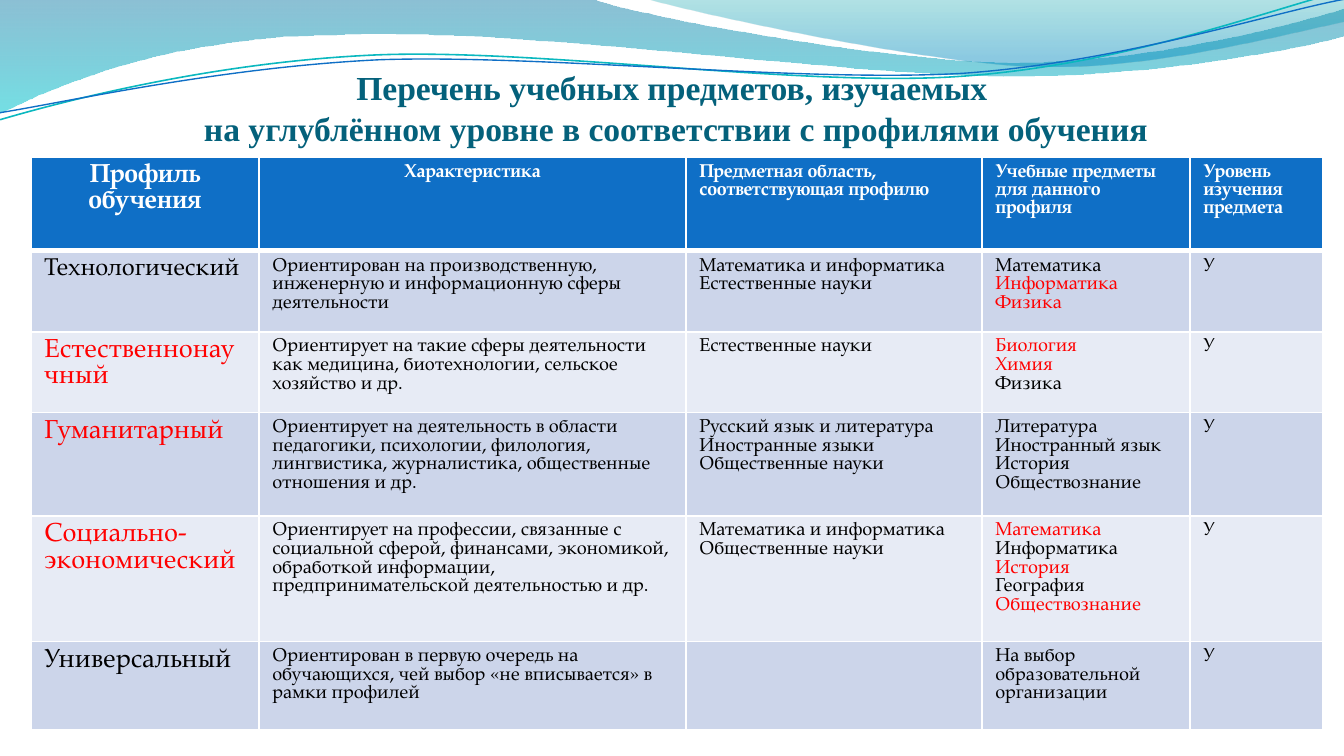
"""Build the slide that lists advanced school subjects by study profile."""
from lxml.etree import SubElement
from pptx import Presentation
from pptx.dml.color import RGBColor
from pptx.enum.text import MSO_ANCHOR, PP_ALIGN
from pptx.oxml.ns import qn
from pptx.util import Pt

SCALE = 914400 / 134.4

WHITE = RGBColor(0xFF, 0xFF, 0xFF)
BLACK = RGBColor(0x00, 0x00, 0x00)
RED = RGBColor(0xFF, 0x00, 0x00)
BLUE = RGBColor(0x0F, 0x6F, 0xC6)
TEAL = RGBColor(0x0A, 0xB8, 0xBF)
TITLE_TEAL = RGBColor(0x04, 0x61, 0x7B)
DARK_BAND = RGBColor(0xCC, 0xD5, 0xEA)
LIGHT_BAND = RGBColor(0xE7, 0xEB, 0xF5)
WAVE_TOP = RGBColor(0x00, 0x74, 0xA1)
WAVE_BOTTOM = RGBColor(0x00, 0xC6, 0xCF)
CREST_TOP = RGBColor(0x00, 0xA1, 0xA9)
CREST_BOTTOM = RGBColor(0x00, 0x8B, 0xBF)

TITLE = ("Перечень учебных предметов, изучаемых\v"
         " на углублённом уровне в соответствии с профилями обучения")
TITLE_FORMAT = {"name": "Times New Roman", "size": Pt(18), "bold": True}

WAVES = [
    ([[(0, 0)], [(591, -1)],
      [(640, 17), (892, 63), (1019, 63)], [(1147, 63), (1288, 26), (1344, 9)],
      [(1345, 36)],
      [(1321, 44), (1169, 77), (1003, 77)], [(836, 75), (513, 28), (345, 35)],
      [(173, 36), (62, 83), (-1, 114)]],
     [(0, WAVE_TOP, 45), (1, WAVE_BOTTOM, 55)]),
    ([[(644, -1)],
      [(684, 11), (917, 62), (1034, 66)], [(1151, 70), (1292, 32), (1344, 22)],
      [(1344, 0)]],
     [(0, CREST_TOP, 30), (0.8, CREST_BOTTOM, 45)]),
]
STRAND_ROTATION = 357.3
STRANDS = [
    ([[(-2, 88)],
      [(64, 72), (212, 41), (372, 41)], [(533, 41), (795, 93), (956, 90)],
      [(1119, 87), (1264, 40), (1344, 23)]], TEAL, 0.85),
    ([[(-2, 81)],
      [(62, 74), (220, 46), (380, 46)], [(542, 48), (801, 89), (963, 87)],
      [(1123, 83), (1273, 41), (1346, 31)]], BLUE, 0.75),
]

COLUMN_WIDTHS = [228, 427, 296, 208, 133]
ROW_HEIGHTS = [94, 74, 69, 96, 120, 88]
RED_MARK = "!"
HEADER = ["Профиль обучения", "Характеристика",
          "Предметная область, соответствующая профилю",
          "Учебные предметы для данного профиля", "Уровень изучения предмета"]
PROFILES = [
    ["Технологический",
     "Ориентирован на производственную, инженерную и информационную сферы деятельности",
     "Математика и информатика\nЕстественные науки",
     "Математика\n!Информатика\n!Физика", "У"],
    ["!Естественнонаучный",
     "Ориентирует на такие сферы деятельности как медицина, биотехнологии, "
     "сельское хозяйство и др.",
     "Естественные науки", "!Биология\n!Химия\nФизика", "У"],
    ["!Гуманитарный",
     "Ориентирует на деятельность в области педагогики, психологии, филология, "
     "лингвистика, журналистика, общественные отношения и др.",
     "Русский язык и литература\nИностранные языки\nОбщественные науки",
     "Литература\nИностранный язык\nИстория\nОбществознание", "У"],
    ["!Социально-экономический",
     "Ориентирует на профессии, связанные с социальной сферой, финансами, экономикой, "
     "обработкой информации, предпринимательской деятельностью и др.",
     "Математика и информатика\nОбщественные науки",
     "!Математика\nИнформатика\n!История\nГеография\n!Обществознание", "У"],
    ["Универсальный",
     "Ориентирован в первую очередь на обучающихся, чей выбор «не вписывается» "
     "в рамки профилей",
     "", "На выбор образовательной организации", "У"],
]


def px(length):
    """Turn px into EMU."""
    return round(length * SCALE)


def format_font(font, values, color):
    """Apply format values and a colour to a font."""
    for attribute, value in values.items():
        setattr(font, attribute, value)
    font.color.rgb = color


def add_outline(slide, segments, close):
    """Add a freeform whose three-point segments are cubic curves."""
    (start,), *rest = segments
    builder = slide.shapes.build_freeform(*start, scale=SCALE)
    builder.add_line_segments([point for segment in rest for point in segment], close=close)
    outline = builder.convert_to_shape()
    outline.shadow.inherit = False
    sides = iter(list(outline._element.spPr.iter(qn("a:lnTo"))))
    for segment in rest:
        first, *others = [next(sides) for _ in segment]
        if others:
            first.tag = qn("a:cubicBezTo")
            for other in others:
                first.append(other[0])
                other.getparent().remove(other)
    return outline


def add_wave(slide, segments, stops):
    """Add a wave with a translucent vertical gradient."""
    wave = add_outline(slide, segments, True)
    wave.line.fill.background()
    wave.fill.gradient()
    wave.fill.gradient_angle = 270
    for stop, (position, color, _) in zip(wave.fill.gradient_stops, stops):
        stop.position = position
        stop.color.rgb = color
    for tint, (_, _, opacity) in zip(wave._element.spPr.iter(qn("a:srgbClr")), stops):
        SubElement(tint, qn("a:alpha"), val=str(opacity * 1000))


def add_strand(slide, segments, color, width):
    """Add a thin, slightly turned curved line."""
    strand = add_outline(slide, segments, False)
    strand.rotation = STRAND_ROTATION
    strand.fill.background()
    strand.line.color.rgb = color
    strand.line.width = Pt(width)


def add_title(slide):
    """Add the centred two-line title."""
    frame = slide.shapes.add_textbox(px(67), px(63), px(1210), px(85)).text_frame
    layout = {"word_wrap": True, "vertical_anchor": MSO_ANCHOR.BOTTOM, "margin_left": 0,
              "margin_right": 0, "margin_top": px(7), "margin_bottom": 0}
    for attribute, value in layout.items():
        setattr(frame, attribute, value)
    heading = frame.paragraphs[0]
    heading.text = TITLE
    heading.alignment = PP_ALIGN.CENTER
    format_font(heading.font, TITLE_FORMAT, TITLE_TEAL)
    for run in heading.runs:
        format_font(run.font, TITLE_FORMAT, TITLE_TEAL)


def add_borders(cell, bottom_width):
    """Draw white borders, which precede the fill in the cell properties."""
    properties = cell._tc.get_or_add_tcPr()
    widths = {"a:lnL": 1, "a:lnR": 1, "a:lnT": 1, "a:lnB": bottom_width}
    for index, (side, width) in enumerate(widths.items()):
        border = SubElement(properties, qn(side), w=str(Pt(width)))
        SubElement(SubElement(border, qn("a:solidFill")), qn("a:srgbClr"), val=str(WHITE))
        properties.insert(index, border)


def fill_cell(cell, text, size, color, band, is_header, centred):
    """Write one table cell, with marked lines in red."""
    cell.fill.solid()
    cell.fill.fore_color.rgb = band
    add_borders(cell, 3 if is_header else 1)
    if not text:
        return
    cell.text = text.replace(RED_MARK, "")
    values = {"name": "TeX Gyre Pagella", "size": Pt(size), "bold": is_header}
    for entry, line in zip(cell.text_frame.paragraphs, text.split("\n")):
        entry.alignment = PP_ALIGN.CENTER if centred else PP_ALIGN.LEFT
        format_font(entry.runs[0].font, values, RED if line.startswith(RED_MARK) else color)


def add_profiles(slide):
    """Add the table of profiles."""
    content = [HEADER, *PROFILES]
    table = slide.shapes.add_table(len(content), len(HEADER), px(31), px(157),
                                   px(sum(COLUMN_WIDTHS)), px(sum(ROW_HEIGHTS))).table
    table.first_row = table.horz_banding = False
    for column, width in zip(table.columns, COLUMN_WIDTHS):
        column.width = px(width)
    for row, (height, texts) in enumerate(zip(ROW_HEIGHTS, content)):
        table.rows[row].height = px(height)
        is_header = row == 0
        band = BLUE if is_header else DARK_BAND if row % 2 else LIGHT_BAND
        name_size = 13 if row == 1 else 14
        for column, text in enumerate(texts):
            fill_cell(table.cell(row, column), text, 10 if column else name_size,
                      WHITE if is_header else BLACK, band, is_header,
                      is_header and column < 2)


def main():
    """Build and save the slide."""
    deck = Presentation()
    deck.slide_width, deck.slide_height = px(1344), px(756)
    slide = deck.slides.add_slide(deck.slide_layouts[6])
    for wave in WAVES:
        add_wave(slide, *wave)
    for strand in STRANDS:
        add_strand(slide, *strand)
    add_title(slide)
    add_profiles(slide)
    deck.save("out.pptx")


if __name__ == "__main__":
    main()
